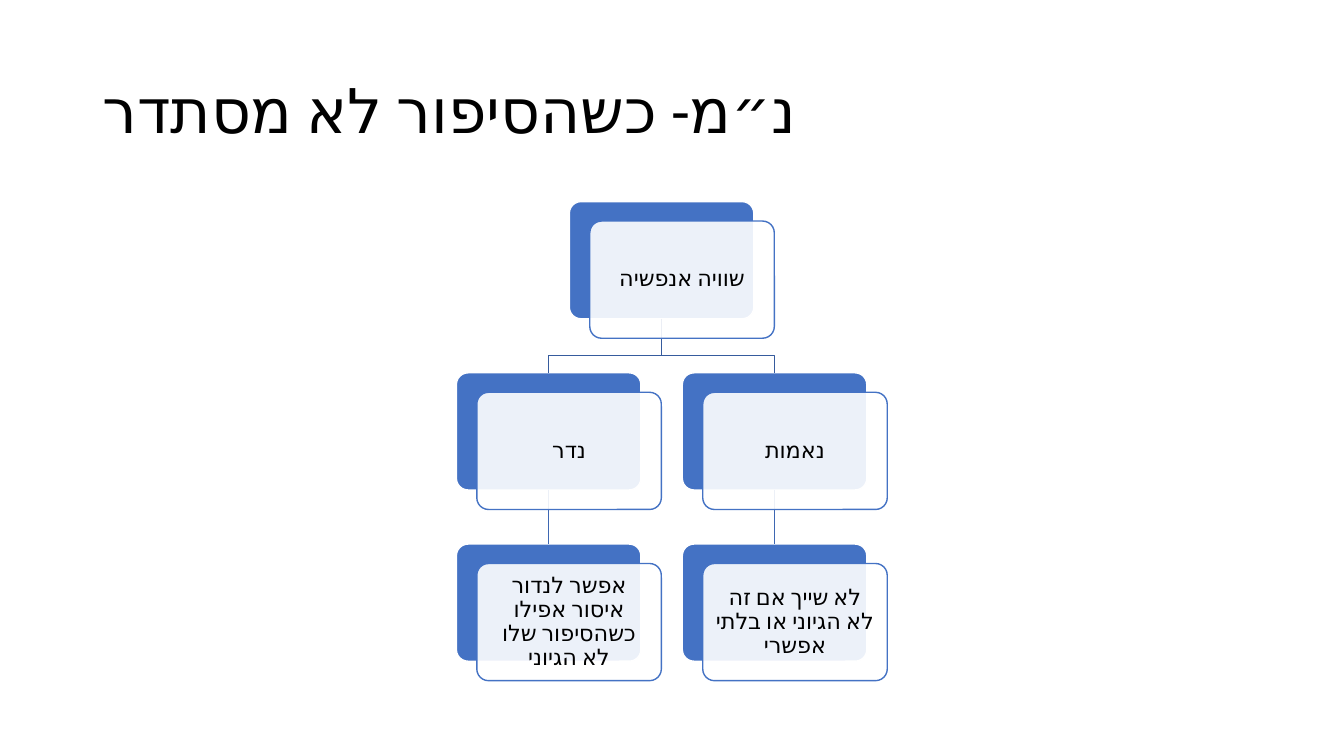
from dataclasses import dataclass
from typing import Optional

from lxml.etree import SubElement
from pptx import Presentation
from pptx.dml.color import RGBColor
from pptx.enum.lang import MSO_LANGUAGE_ID as Language
from pptx.enum.shapes import MSO_CONNECTOR as Connector
from pptx.enum.shapes import MSO_SHAPE as Preset
from pptx.enum.text import MSO_ANCHOR as Anchor
from pptx.enum.text import PP_ALIGN as Align
from pptx.oxml.ns import qn
from pptx.util import Pt


@dataclass(frozen=True)
class Theme:
    font: str = "Calibri"
    title_size: float = 44
    card_size: float = 16
    text: RGBColor = RGBColor(0, 0, 0)
    white: RGBColor = RGBColor(255, 255, 255)
    accent: RGBColor = RGBColor.from_string("4472C4")
    branch: RGBColor = RGBColor.from_string("365B9D")
    stem: RGBColor = RGBColor.from_string("3E67B2")


@dataclass(frozen=True)
class Node:
    text: str
    column: int
    row: int
    parent: Optional[int] = None

    @property
    def left(self) -> float:
        return TREE_LEFT + self.column * COLUMN_STEP

    @property
    def top(self) -> float:
        return TREE_TOP + self.row * ROW_STEP

    @property
    def middle(self) -> float:
        return self.left + CARD_WIDTH / 2

    @property
    def bottom(self) -> float:
        return self.top + CARD_HEIGHT


THEME = Theme()
TREE_LEFT, TREE_TOP = 326, 144
COLUMN_STEP, ROW_STEP = 80.7, 122.3
CARD_WIDTH, CARD_HEIGHT = 131.8, 83.7
SHIFT_X, SHIFT_Y = 14.6, 13.9
BEND_RISE = 12.2

NODES = [
    Node("שוויה אנפשיה", 1, 0),
    Node("נאמות", 2, 1, parent=0),
    Node("לא שייך אם זה לא הגיוני או בלתי אפשרי", 2, 2, parent=1),
    Node("נדר", 0, 1, parent=0),
    Node("אפשר לנדור איסור אפילו כשהסיפור שלו לא הגיוני", 0, 2, parent=3),
]


def write(box, text: str, size: float, inset_x: float, inset_y: float):
    frame = box.text_frame
    frame.word_wrap = True
    frame.vertical_anchor = Anchor.MIDDLE
    frame.margin_left = frame.margin_right = Pt(inset_x)
    frame.margin_top = frame.margin_bottom = Pt(inset_y)
    para = frame.paragraphs[0]
    para.line_spacing = 0.9
    span = para.add_run()
    span.text = text
    span.font.size = Pt(size)
    span.font.name = THEME.font
    span.font.color.rgb = THEME.text
    span.font.language_id = Language.HEBREW
    # Hebrew takes its typeface from the complex-script slot
    SubElement(span.font._element, qn("a:cs")).set("typeface", THEME.font)
    return para


def add_card(page, left: float, top: float, fill: RGBColor, line: RGBColor):
    card = page.shapes.add_shape(
        Preset.ROUNDED_RECTANGLE, Pt(left), Pt(top), Pt(CARD_WIDTH), Pt(CARD_HEIGHT))
    card.adjustments[0] = 0.1
    card.shadow.inherit = False
    card.fill.solid()
    card.fill.fore_color.rgb = fill
    card.line.color.rgb = line
    card.line.width = Pt(1)
    return card


def add_front(page, node: Node) -> None:
    card = add_card(page, node.left + SHIFT_X, node.top + SHIFT_Y, THEME.white, THEME.accent)
    color = card.element.spPr.find(qn("a:solidFill"))[0]
    SubElement(color, qn("a:alpha")).set("val", "90000")
    para = write(card, node.text, THEME.card_size, 5, 5)
    para.alignment = Align.CENTER
    para._p.get_or_add_pPr().set("rtl", "1")


def add_stem(page, upper, lower) -> None:
    stem = page.shapes.add_connector(Connector.STRAIGHT, 0, 0, 0, 0)
    stem.begin_connect(upper, 2)
    stem.end_connect(lower, 0)
    stem.line.color.rgb = THEME.stem
    stem.line.width = Pt(1)
    SubElement(stem.element.spPr, qn("a:effectLst"))


def add_branch(page, parent: Node, child: Node) -> None:
    bend = child.top - BEND_RISE
    corners = [(parent.middle, bend), (child.middle, bend), (child.middle, child.top)]
    builder = page.shapes.build_freeform(Pt(parent.middle), Pt(parent.bottom))
    builder.add_line_segments([(Pt(x), Pt(y)) for x, y in corners], close=False)
    branch = builder.convert_to_shape()
    branch.shadow.inherit = False
    branch.fill.background()
    branch.line.color.rgb = THEME.branch
    branch.line.width = Pt(1)


def main() -> None:
    deck = Presentation()
    deck.slide_width, deck.slide_height = Pt(960), Pt(540)
    page = deck.slides.add_slide(deck.slide_layouts[6])

    # Title
    title = page.shapes.add_textbox(Pt(66), Pt(28.8), Pt(828), Pt(104.4))
    write(title, "נ״מ- כשהסיפור לא מסתדר", THEME.title_size, 7.2, 3.6)

    # Blue cards at the back
    backs = [add_card(page, node.left, node.top, THEME.accent, THEME.white) for node in NODES]

    # Links from parent to child
    for node, back in zip(NODES, backs):
        if node.parent is None:
            continue
        parent = NODES[node.parent]
        if parent.column == node.column:
            add_stem(page, backs[node.parent], back)
        else:
            add_branch(page, parent, node)

    # Translucent cards with the text
    for node in NODES:
        add_front(page, node)

    deck.save("out.pptx")


if __name__ == "__main__":
    main()
